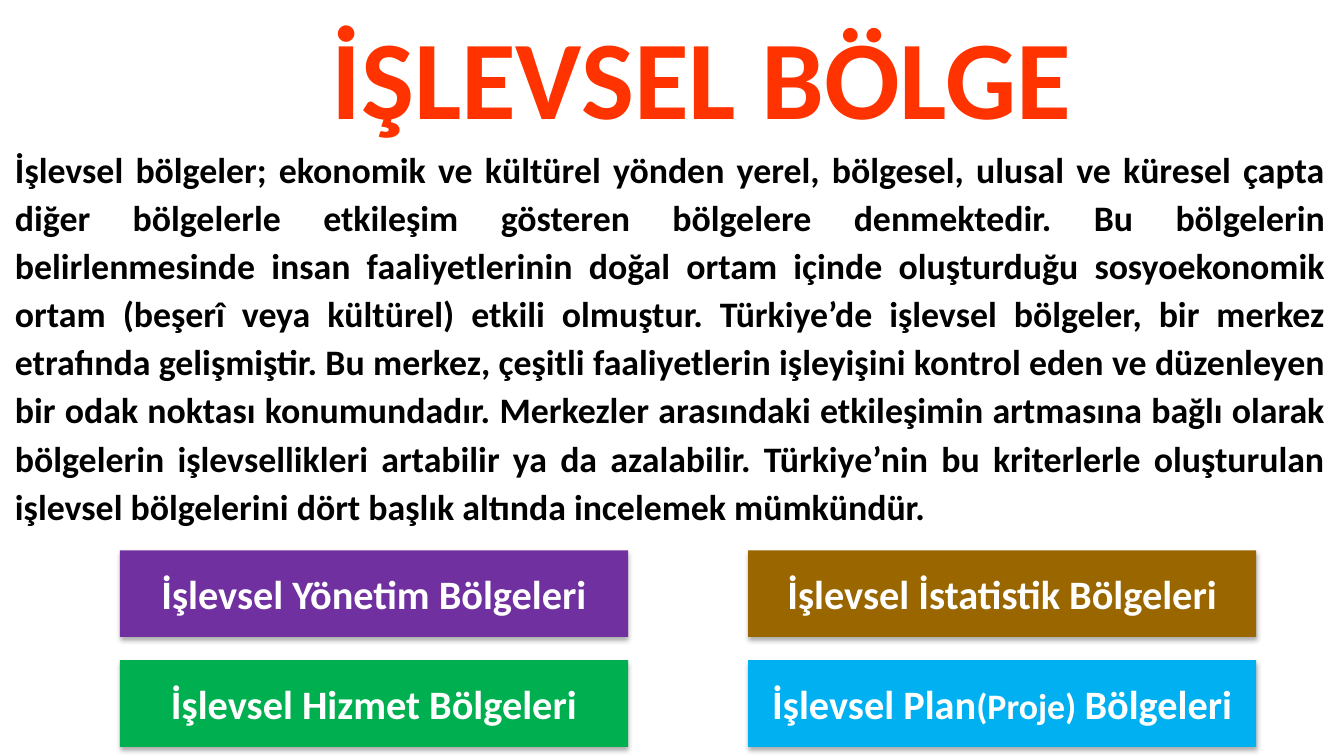
from lxml.etree import SubElement
from pptx import Presentation
from pptx.dml.color import RGBColor
from pptx.enum.shapes import MSO_SHAPE
from pptx.enum.text import MSO_ANCHOR, MSO_AUTO_SIZE, PP_ALIGN
from pptx.oxml.ns import qn
from pptx.util import Inches, Pt

TITLE_ONLY = 5
BODY = (
    "İşlevsel bölgeler; ekonomik ve kültürel yönden yerel, bölgesel, ulusal ve küresel çapta "
    "diğer bölgelerle etkileşim gösteren bölgelere denmektedir. Bu bölgelerin belirlenmesinde "
    "insan faaliyetlerinin doğal ortam içinde oluşturduğu sosyoekonomik ortam (beşerî veya "
    "kültürel) etkili olmuştur. Türkiye’de işlevsel bölgeler, bir merkez etrafında gelişmiştir. "
    "Bu merkez, çeşitli faaliyetlerin işleyişini kontrol eden ve düzenleyen bir odak noktası "
    "konumundadır. Merkezler arasındaki etkileşimin artmasına bağlı olarak bölgelerin "
    "işlevsellikleri artabilir ya da azalabilir. Türkiye’nin bu kriterlerle oluşturulan "
    "işlevsel bölgelerini dört başlık altında incelemek mümkündür."
)
# Each column lists its boxes from top to bottom: fill and (text, size) runs.
REGION_COLUMNS = [
    [("7030A0", [("İşlevsel Yönetim Bölgeleri", 28.8)]),
     ("00B050", [("İşlevsel Hizmet Bölgeleri", 28.8)])],
    [("996600", [("İşlevsel İstatistik Bölgeleri", 28.8)]),
     ("00B0F0", [("İşlevsel Plan", 28.8), ("(Proje) ", 25.6), ("Bölgeleri", 28.8)])],
]


def rgb(value):
    return RGBColor.from_string(value)


def add_run(paragraph, text, *, size, color, font="Calibri", bold=True):
    run = paragraph.add_run()
    run.text = text
    run.font.name = font
    run.font.size = Pt(size)
    run.font.bold = bold
    run.font.color.rgb = rgb(color)


def add_shadow(shape, color="000000", opacity=32, blur=3.5, distance=2.2, angle=90):
    shape.shadow.inherit = False
    effects = shape._element.spPr.find(qn("a:effectLst"))
    shadow = SubElement(effects, qn("a:outerShdw"), blurRad=str(Pt(blur)),
                        dist=str(Pt(distance)), dir=str(angle * 60000), rotWithShape="0")
    tint = SubElement(shadow, qn("a:srgbClr"), val=color)
    SubElement(tint, qn("a:alpha"), val=str(opacity * 1000))


class RegionSlide:
    title_color = "FF3300"
    body_color = "000000"
    label_color = "FFFFFF"

    def __init__(self, presentation):
        self.slide = presentation.slides.add_slide(presentation.slide_layouts[TITLE_ONLY])

    def title(self, text, left, top, width, height):
        shape = self.slide.shapes.title
        shape.left, shape.top = Inches(left), Inches(top)
        shape.width, shape.height = Inches(width), Inches(height)
        frame = shape.text_frame
        frame.word_wrap = False
        frame.auto_size = MSO_AUTO_SIZE.SHAPE_TO_FIT_TEXT
        frame.vertical_anchor = MSO_ANCHOR.TOP
        frame.margin_left = frame.margin_right = Inches(0.08)
        frame.margin_top = frame.margin_bottom = Inches(0.04)
        paragraph = frame.paragraphs[0]
        paragraph.alignment = PP_ALIGN.CENTER
        add_run(paragraph, text, size=80, color=self.title_color)

    def body(self, text, left, top, width, height):
        box = self.slide.shapes.add_textbox(
            Inches(left), Inches(top), Inches(width), Inches(height))
        frame = box.text_frame
        frame.word_wrap = True
        frame.auto_size = MSO_AUTO_SIZE.SHAPE_TO_FIT_TEXT
        paragraph = frame.paragraphs[0]
        paragraph.alignment = PP_ALIGN.JUSTIFY
        paragraph.line_spacing = Pt(34.4)
        add_run(paragraph, text, size=25.6, color=self.body_color)

    def region(self, runs, fill, left, top, width=5.04, height=0.86):
        shape = self.slide.shapes.add_shape(
            MSO_SHAPE.RECTANGLE, Inches(left), Inches(top), Inches(width), Inches(height))
        shape.fill.solid()
        shape.fill.fore_color.rgb = rgb(fill)
        shape.line.fill.background()
        add_shadow(shape)
        shape.text_frame.vertical_anchor = MSO_ANCHOR.MIDDLE
        paragraph = shape.text_frame.paragraphs[0]
        paragraph.alignment = PP_ALIGN.CENTER
        for text, size in runs:
            add_run(paragraph, text, size=size, color=self.label_color)


def main():
    presentation = Presentation()
    presentation.slide_width, presentation.slide_height = Inches(13.33), Inches(7.5)
    page = RegionSlide(presentation)
    page.title("İŞLEVSEL BÖLGE", 3.17, 0.03, 7.58, 1.43)
    page.body(BODY, 0.05, 1.36, 13.19, 3.89)
    for column, regions in enumerate(REGION_COLUMNS):
        for row, (fill, runs) in enumerate(regions):
            page.region(runs, fill, left=1.19 + 6.23 * column, top=5.46 + 1.09 * row)
    presentation.save("out.pptx")


if __name__ == "__main__":
    main()
